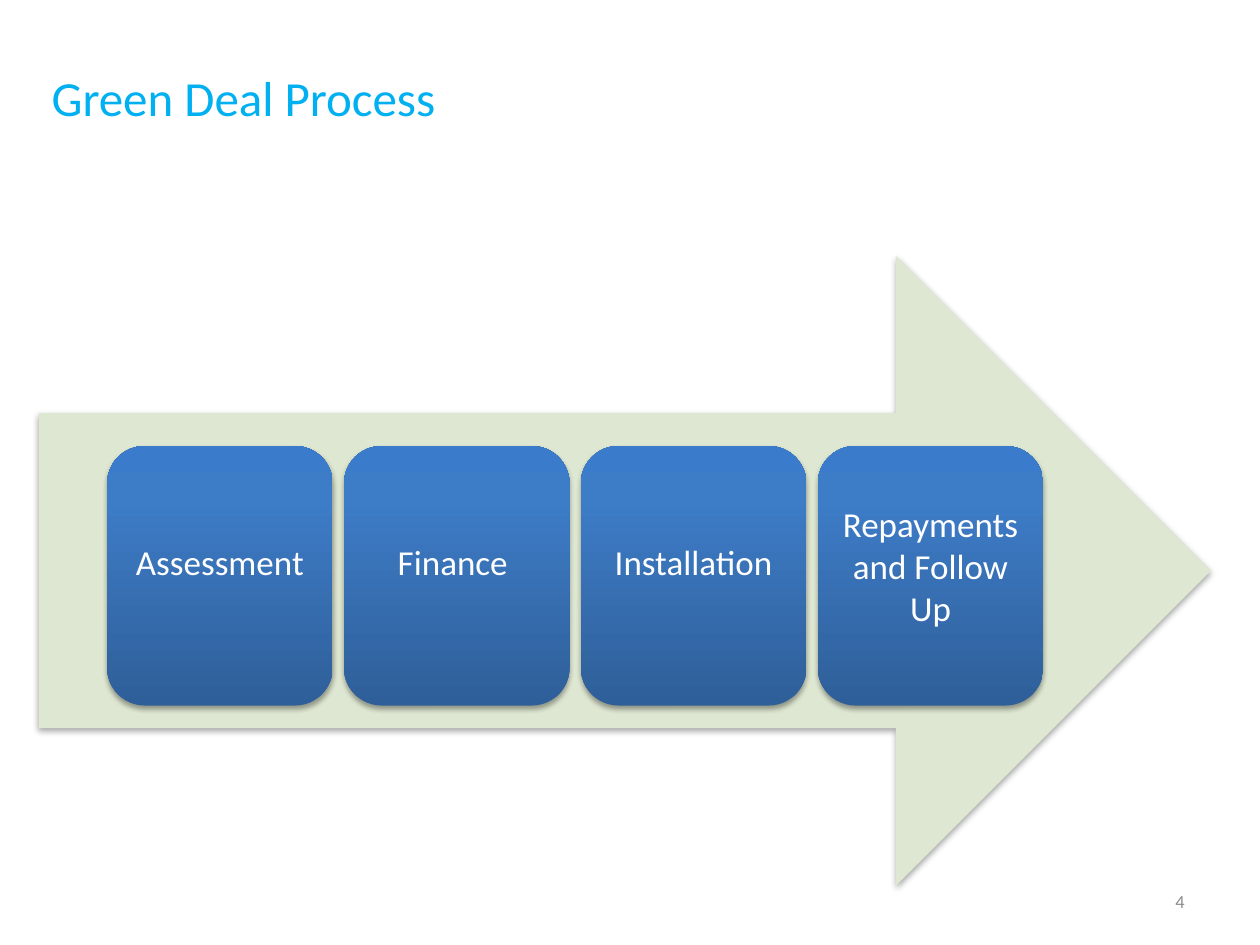
from lxml import etree
from pptx import Presentation
from pptx.dml.color import RGBColor as Rgb
from pptx.enum.shapes import MSO_SHAPE as Shape
from pptx.enum.text import MSO_ANCHOR as Anchor, PP_ALIGN as Align
from pptx.oxml import parse_xml
from pptx.oxml.ns import nsdecls, qn
from pptx.util import Inches, Pt

HUES = {
    "title": "00B0F0", "arrow": "DEE7D1", "text": "FFFFFF", "page": "8C8C8C",
    "low": "2F5F99", "mid": "3D7CC7", "high": "3A7CCB", "shade": "000000",
}
STEPS = [
    ("Assessment", 0.66),
    ("Finance ", 0.66),
    ("Installation", 0.66),
    ("Repayments and Follow Up", 0.36),
]


class Deck:
    """Holds the style and the slide being drawn."""

    font = "Calibri"
    stops = [(0, "low"), (80, "mid"), (100, "high")]

    def __init__(self):
        self.prs = Presentation()
        self.prs.slide_width, self.prs.slide_height = Inches(10), Inches(7.5)
        self.slide = self.prs.slides.add_slide(self.prs.slide_layouts[5])

    def put(self, frame, text, size, hue, align, anchor):
        frame.word_wrap = True
        frame.vertical_anchor = anchor
        para = frame.paragraphs[0]
        para.alignment = align
        run = para.add_run()
        run.text = text
        run.font.name, run.font.size = self.font, Pt(size)
        run.font.color.rgb = Rgb.from_string(HUES[hue])

    def title(self, text, *box):
        head = self.slide.shapes.title
        head.left, head.top, head.width, head.height = map(Inches, box)
        self.put(head.text_frame, text, 28, "title", Align.LEFT, Anchor.BOTTOM)

    def label(self, text, *box):
        note = self.slide.shapes.add_textbox(*map(Inches, box))
        self.put(note.text_frame, text, 10.5, "page", Align.RIGHT, Anchor.MIDDLE)

    def shade(self, shape):
        shape.line.fill.background()
        shape.shadow.inherit = False
        glow = shape.element.spPr.find(qn("a:effectLst"))
        outer = etree.SubElement(
            glow, qn("a:outerShdw"), blurRad=str(Pt(3.1)), dist=str(Pt(1.8)),
            dir="5400000", rotWithShape="0")
        tint = etree.SubElement(outer, qn("a:srgbClr"), val=HUES["shade"])
        etree.SubElement(tint, qn("a:alpha"), val="35000")

    def arrow(self, *box):
        shape = self.slide.shapes.add_shape(Shape.RIGHT_ARROW, *map(Inches, box))
        shape.fill.solid()
        shape.fill.fore_color.rgb = Rgb.from_string(HUES["arrow"])
        self.shade(shape)

    def step(self, text, inset, *box):
        shape = self.slide.shapes.add_shape(Shape.ROUNDED_RECTANGLE, *map(Inches, box))
        self.shade(shape)
        stops = "".join(
            f'<a:gs pos="{pos * 1000}"><a:srgbClr val="{HUES[hue]}"/></a:gs>'
            for pos, hue in self.stops)
        grad = parse_xml(
            f'<a:gradFill {nsdecls("a")} rotWithShape="1"><a:gsLst>{stops}</a:gsLst>'
            '<a:lin ang="16200000" scaled="0"/></a:gradFill>')
        shape.element.spPr.find(qn("a:prstGeom")).addnext(grad)
        shape.text_frame.margin_top = Inches(inset)
        self.put(shape.text_frame, text, 20, "text", Align.CENTER, Anchor.TOP)


def main():
    deck = Deck()
    deck.title("Green Deal Process", 0.31, 0.5, 6.62, 0.55)
    deck.arrow(0.31, 2.03, 9.3, 5)
    deck.label("4", 8.77, 6.95, 0.73, 0.4)
    for i, (text, inset) in enumerate(STEPS):
        deck.step(text, inset, 0.85 + i * 1.88, 3.54, 1.79, 2.06)
    deck.prs.save("out.pptx")


if __name__ == "__main__":
    main()
